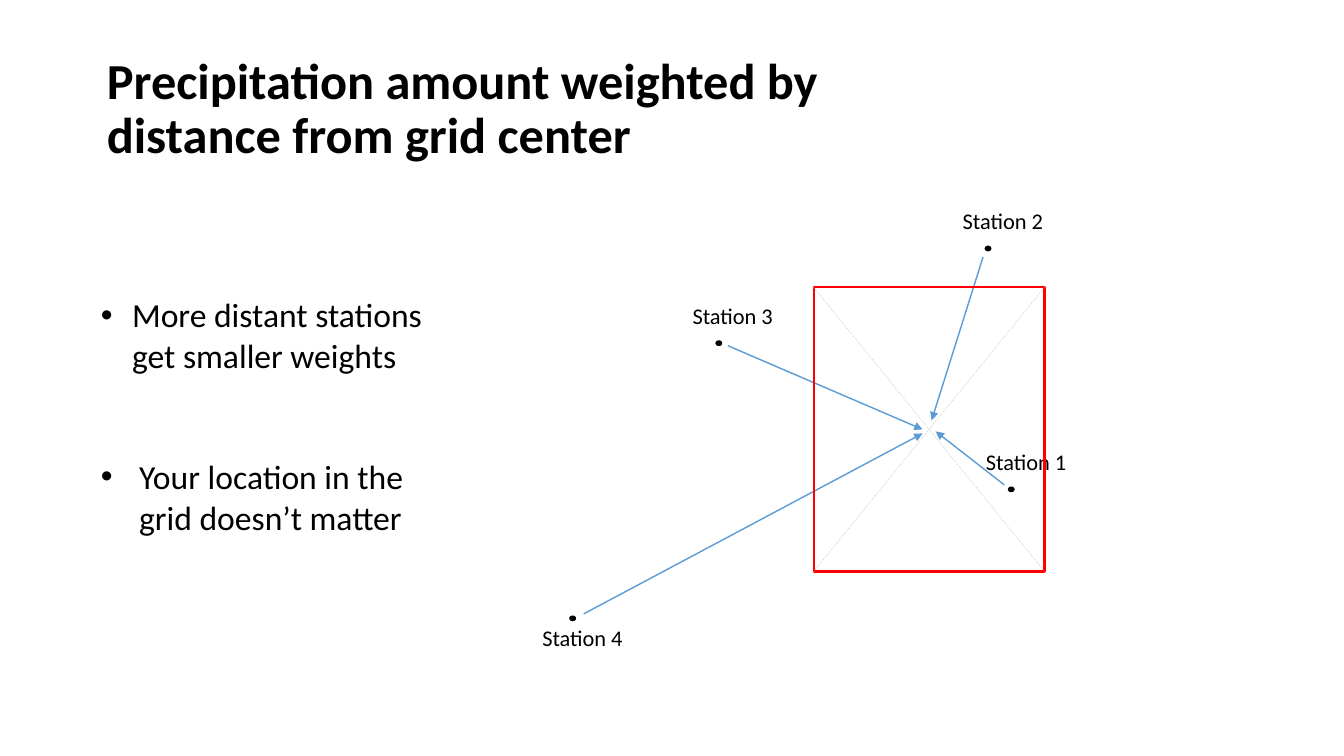
from dataclasses import dataclass

from lxml import etree
from pptx import Presentation
from pptx.dml.color import RGBColor
from pptx.enum.dml import MSO_LINE
from pptx.enum.shapes import MSO_CONNECTOR, MSO_SHAPE
from pptx.enum.text import MSO_ANCHOR as Anchor, MSO_AUTO_SIZE as AutoSize, PP_ALIGN as Align
from pptx.oxml.ns import qn
from pptx.util import Inches, Pt

BLACK, RED, BLUE, GRAY = "000000", "FF0000", "5B9BD5", "BFBFBF"
Point = tuple[float, float]


@dataclass
class Station:
    name: str
    dot: Point
    label: Point
    arrow_start: Point
    arrow_end: Point


@dataclass
class Bullet:
    text: str
    indent: float
    space_before: float


STATIONS = [
    Station("Station 1", (10, 4.83), (9.68, 4.4), (9.96, 4.81), (9.28, 4.28)),
    Station("Station 2", (9.77, 2.44), (9.45, 2.01), (9.75, 2.55), (9.24, 4.17)),
    Station("Station 3", (7.1, 3.38), (6.77, 2.95), (7.22, 3.43), (9.15, 4.26)),
    Station("Station 4", (5.65, 6.11), (5.28, 6.14), (5.79, 6.09), (9.15, 4.3)),
]
BULLETS = [
    Bullet("More distant stations get smaller weights", 0.31, 0),
    Bullet("Your location in the grid doesn’t matter", 0.38, 58),
]
CELL_LEFT, CELL_TOP, CELL_WIDTH, CELL_HEIGHT = 8.07, 2.85, 2.29, 2.82


def rgb(color: str) -> RGBColor:
    return RGBColor.from_string(color)


def place(sp, left: float, top: float, width: float, height: float) -> None:
    sp.left, sp.top, sp.width, sp.height = map(Inches, (left, top, width, height))


def write(p, text: str, *, size: float, bold: bool = False, before: float = 0,
          line_spacing: float = 1.0) -> None:
    p.alignment = Align.LEFT
    p.space_before, p.line_spacing = Pt(before), line_spacing
    r = p.add_run()
    r.text = text
    r.font.name, r.font.size, r.font.bold = "Calibri", Pt(size), bold
    r.font.color.rgb = rgb(BLACK)


def add_shape(s, kind, left: float, top: float, width: float, height: float, *,
              line: str, weight: float, fill: str | None = None) -> None:
    sp = s.shapes.add_shape(kind, *map(Inches, (left, top, width, height)))
    sp.shadow.inherit = False
    if fill:
        sp.fill.solid()
        sp.fill.fore_color.rgb = rgb(fill)
    else:
        sp.fill.background()
    sp.line.color.rgb, sp.line.width = rgb(line), Pt(weight)


def add_line(s, start: Point, end: Point, *, color: str, weight: float,
             dashed: bool = False, arrow: bool = False) -> None:
    c = s.shapes.add_connector(MSO_CONNECTOR.STRAIGHT, *map(Inches, (*start, *end)))
    c.line.color.rgb, c.line.width = rgb(color), Pt(weight)
    if dashed:
        c.line.dash_style = MSO_LINE.DASH
    spPr = c._element.spPr
    if arrow:
        etree.SubElement(spPr.find(qn("a:ln")), qn("a:tailEnd"), type="triangle")
    etree.SubElement(spPr, qn("a:effectLst"))


def add_title(s) -> None:
    sp = s.shapes.title
    place(sp, 0.96, 0.47, 9, 1.25)
    tf = sp.text_frame
    tf.auto_size, tf.vertical_anchor = AutoSize.NONE, Anchor.MIDDLE
    write(tf.paragraphs[0], "Precipitation amount weighted by distance from grid center",
          size=36, bold=True, line_spacing=0.9)


def add_bullets(s) -> None:
    sp = s.placeholders[1]
    place(sp, 0.9, 2.87, 3.61, 2.76)
    tf = sp.text_frame
    tf.auto_size, tf.vertical_anchor = AutoSize.NONE, Anchor.TOP
    for i, bullet in enumerate(BULLETS):
        p = tf.add_paragraph() if i else tf.paragraphs[0]
        write(p, bullet.text, size=24, before=bullet.space_before)
        pPr = p._p.get_or_add_pPr()
        pPr.set("marL", str(Inches(bullet.indent)))
        pPr.set("indent", str(-Inches(bullet.indent)))
        etree.SubElement(pPr, qn("a:buChar"), char="•")


def add_station(s, station: Station) -> None:
    add_shape(s, MSO_SHAPE.OVAL, *station.dot, 0.06, 0.05, line=BLACK, weight=0.5, fill=BLACK)
    tf = s.shapes.add_textbox(*map(Inches, (*station.label, 1.01, 0.37))).text_frame
    tf.word_wrap = False
    write(tf.paragraphs[0], station.name, size=16)


def add_grid_cell(s) -> None:
    """Draw the red cell and the diagonals that mark its center."""
    right, bottom = CELL_LEFT + CELL_WIDTH, CELL_TOP + CELL_HEIGHT
    add_shape(s, MSO_SHAPE.RECTANGLE, CELL_LEFT, CELL_TOP, CELL_WIDTH, CELL_HEIGHT,
              line=RED, weight=1.5)
    for start_y, end_y in ((CELL_TOP, bottom), (bottom, CELL_TOP)):
        add_line(s, (CELL_LEFT, start_y), (right, end_y), color=GRAY, weight=0.25, dashed=True)


def main() -> None:
    prs = Presentation()
    prs.slide_width, prs.slide_height = Inches(13.33), Inches(7.5)
    s = prs.slides.add_slide(prs.slide_layouts[1])
    add_title(s)
    add_bullets(s)
    for station in STATIONS:
        add_station(s, station)
    for station in STATIONS:
        add_line(s, station.arrow_start, station.arrow_end, color=BLUE, weight=1, arrow=True)
    add_grid_cell(s)
    prs.save("out.pptx")


if __name__ == "__main__":
    main()
